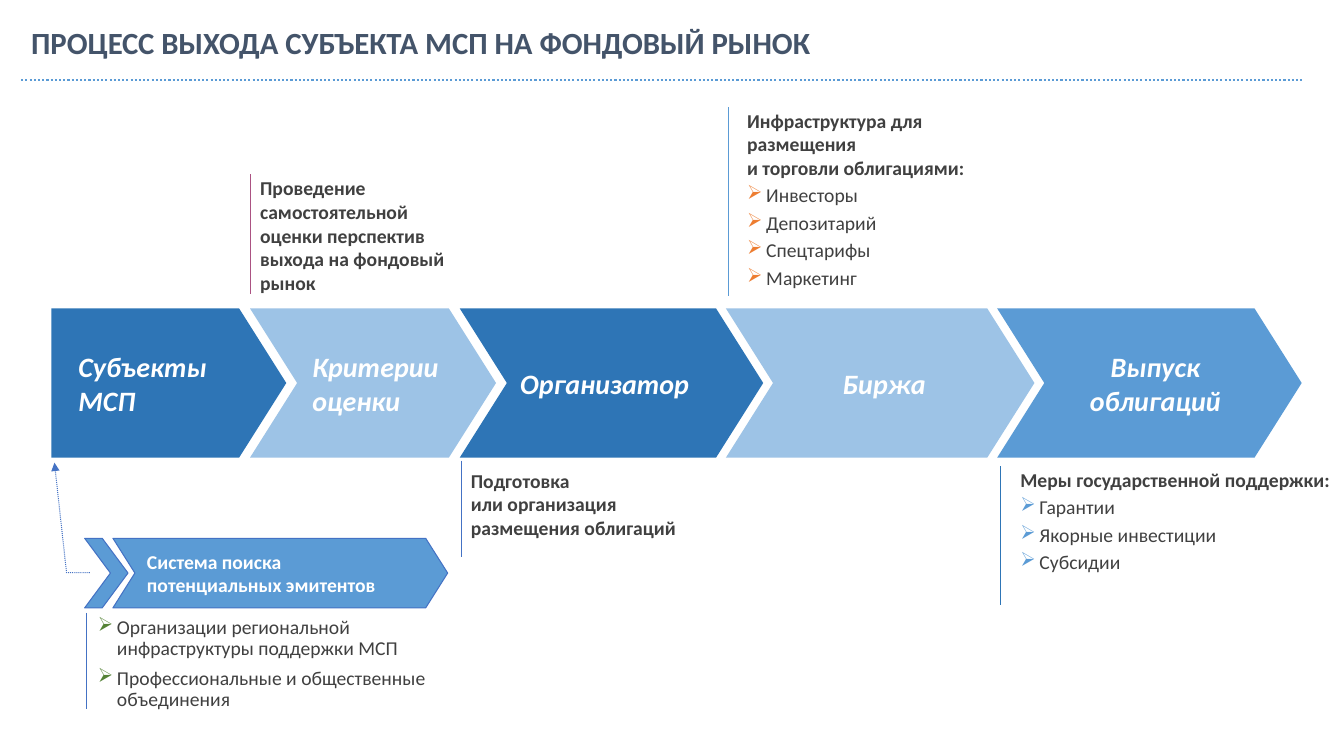
from lxml import etree
from pptx import Presentation
from pptx.dml.color import RGBColor
from pptx.enum import dml, shapes, text
from pptx.oxml import ns
from pptx.util import Inches, Pt

FONT = "Calibri"
WHITE = RGBColor(0xFF, 0xFF, 0xFF)
SLATE = RGBColor(0x44, 0x54, 0x6A)
GRAY = RGBColor(0x40, 0x40, 0x40)
DARK_BLUE = RGBColor(0x2E, 0x75, 0xB6)
BLUE = RGBColor(0x5B, 0x9B, 0xD5)
LIGHT_BLUE = RGBColor(0x9D, 0xC3, 0xE6)
ROYAL_BLUE = RGBColor(0x44, 0x72, 0xC4)
PURPLE = RGBColor(0xAB, 0x52, 0x82)
ORANGE = RGBColor(0xED, 0x7D, 0x31)
GREEN = RGBColor(0x54, 0x82, 0x35)

LEFT = text.PP_ALIGN.LEFT
CENTER = text.PP_ALIGN.CENTER
CHEVRON = shapes.MSO_SHAPE.CHEVRON
PENTAGON = shapes.MSO_SHAPE.PENTAGON

STEP_TOP, STEP_HEIGHT = 3.06, 1.48
STEPS = [
    (PENTAGON, 0.51, 2.33, DARK_BLUE, "Субъекты МСП", 0.68, 2.05, LEFT),
    (CHEVRON, 2.48, 2.44, LIGHT_BLUE, "Критерии оценки", 3, 1.6, LEFT),
    (CHEVRON, 4.56, 3.01, DARK_BLUE, "Организатор", 5.06, 2.2, LEFT),
    (CHEVRON, 7.2, 3.06, LIGHT_BLUE, "Биржа", 8.04, 1.44, CENTER),
    (CHEVRON, 9.89, 3.02, BLUE, "Выпуск облигаций", 10.57, 1.76, CENTER),
]


def style_para(para, size, color, bold=False, italic=False):
    for span in para.runs:
        span.font.name = FONT
        span.font.size = Pt(size)
        span.font.color.rgb = color
        span.font.bold = bold
        span.font.italic = italic


def add_bullet(para, color):
    props = para._p.get_or_add_pPr()
    props.set("marL", str(Inches(0.19)))
    props.set("indent", str(-Inches(0.19)))
    bullet_color = etree.SubElement(props, ns.qn("a:buClr"))
    etree.SubElement(bullet_color, ns.qn("a:srgbClr")).set("val", str(color))
    etree.SubElement(props, ns.qn("a:buChar")).set("char", "➢")


def set_frame(frame, insets, anchor=text.MSO_ANCHOR.TOP):
    frame.word_wrap = True
    frame.vertical_anchor = anchor
    (frame.margin_left, frame.margin_top,
     frame.margin_right, frame.margin_bottom) = map(Inches, insets)


def add_text_box(slide, left, top, width, height, insets, anchor=text.MSO_ANCHOR.TOP):
    box = slide.shapes.add_textbox(*map(Inches, (left, top, width, height)))
    set_frame(box.text_frame, insets, anchor)
    return box.text_frame


def add_block(slide, preset, left, top, width, height, adjust, fill, outline=None):
    block = slide.shapes.add_shape(preset, *map(Inches, (left, top, width, height)))
    block.shadow.inherit = False
    block.adjustments[0] = adjust
    block.fill.solid()
    block.fill.fore_color.rgb = fill
    if outline is None:
        block.line.fill.background()
    else:
        block.line.color.rgb = outline
        block.line.width = Pt(0.75)
    return block


def dot_line(line, color, width):
    line.color.rgb = color
    line.width = Pt(width)
    line.dash_style = dml.MSO_LINE.ROUND_DOT


def add_rule(slide, start_x, start_y, end_x, end_y, color, width=0.25):
    rule = slide.shapes.add_connector(
        shapes.MSO_CONNECTOR.STRAIGHT, *map(Inches, (start_x, start_y, end_x, end_y)))
    dot_line(rule.line, color, width)
    etree.SubElement(rule._element.spPr, ns.qn("a:effectLst"))


def add_header(slide, left, top, width, height):
    add_rule(slide, left, top + 0.56, left + width, top + 0.56, BLUE, 1.5)
    frame = add_text_box(slide, left, top, width, height, (0.1, 0.05, 0.1, 0.05))
    para = frame.paragraphs[0]
    para.text = "ПРОЦЕСС ВЫХОДА СУБЪЕКТА МСП НА ФОНДОВЫЙ РЫНОК"
    para.line_spacing = 0.9
    style_para(para, 22, SLATE, bold=True)


def add_steps(slide, top, height):
    for preset, left, width, fill, label, label_left, label_width, align in STEPS:
        add_block(slide, preset, left, top, width, height, 0.316, fill)
        frame = add_text_box(slide, label_left, top, label_width, height,
                             (0.1, 0.1, 0.08, 0.1), text.MSO_ANCHOR.MIDDLE)
        para = frame.paragraphs[0]
        para.text = label
        para.alignment = align
        style_para(para, 20, WHITE, bold=True, italic=True)


def add_note(slide, left, top, width, height, heading, items=(), bullet_color=None):
    frame = add_text_box(slide, left, top, width, height, (0, 0, 0, 0))
    frame.paragraphs[0].text = heading
    style_para(frame.paragraphs[0], 14, GRAY, bold=True)
    for item in items:
        para = frame.add_paragraph()
        para.text = item
        para.space_before = Pt(2.8)
        add_bullet(para, bullet_color)
        style_para(para, 14, GRAY)


def add_notes(slide):
    add_rule(slide, 2.48, 2.91, 2.48, 1.72, PURPLE)
    add_note(slide, 2.58, 1.75, 2.02, 1.2,
             "Проведение самостоятельной оценки перспектив выхода на фондовый рынок")
    add_rule(slide, 4.57, 5.52, 4.57, 4.57, ROYAL_BLUE)
    add_note(slide, 4.67, 4.65, 2.49, 0.83,
             "Подготовка \vили организация размещения облигаций")
    add_rule(slide, 7.22, 2.93, 7.22, 1.06, BLUE)
    add_note(slide, 7.41, 1.08, 2.46, 1.85,
             "Инфраструктура для размещения \vи торговли облигациями:",
             ["Инвесторы", "Депозитарий", "Спецтарифы", "Маркетинг"], ORANGE)
    add_rule(slide, 9.92, 6, 9.92, 4.62, DARK_BLUE)
    add_note(slide, 10.12, 4.64, 3.1, 1.67, "Меры государственной поддержки:",
             ["Гарантии", "Якорные инвестиции", "Субсидии"], BLUE)


def add_search_system(slide, left, top, width, height):
    builder = slide.shapes.build_freeform(Inches(left + 0.05), Inches(top + 0.34), scale=1)
    builder.add_line_segments(
        [(Inches(left - 0.18), Inches(top + 0.34)), (Inches(left - 0.3), Inches(top - 0.75))],
        close=False)
    arrow = builder.convert_to_shape()
    arrow.shadow.inherit = False
    arrow.fill.background()
    dot_line(arrow.line, ROYAL_BLUE, 0.75)
    etree.SubElement(arrow.line._get_or_add_ln(), ns.qn("a:tailEnd")).set("type", "triangle")

    add_rule(slide, left + 0.01, top + 1.69, left + 0.01, top + 0.74, ROYAL_BLUE)
    frame = add_text_box(slide, left + 0.05, top + 0.79, 3.35, 0.83, (0.08, 0, 0, 0))
    frame.text = ("Организации региональной инфраструктуры поддержки МСП\n"
                  "Профессиональные и общественные объединения")
    for para in frame.paragraphs:
        para.line_spacing = Pt(15)
        para.space_after = Pt(6)
        add_bullet(para, GREEN)
        style_para(para, 14, GRAY)

    banner = add_block(slide, CHEVRON, left + 0.28, top, width - 0.28, height,
                       0.316, BLUE, ROYAL_BLUE)
    set_frame(banner.text_frame, (0.12, 0.08, 0.12, 0.08), text.MSO_ANCHOR.MIDDLE)
    para = banner.text_frame.paragraphs[0]
    para.text = "Система поиска потенциальных эмитентов"
    para.alignment = LEFT
    style_para(para, 14, WHITE, bold=True)
    add_block(slide, CHEVRON, left, top, 0.43, height, 0.595, BLUE, ROYAL_BLUE)


def main():
    deck = Presentation()
    deck.slide_width = Inches(13.33)
    deck.slide_height = Inches(7.5)
    slide = deck.slides.add_slide(deck.slide_layouts[6])
    add_header(slide, 0.21, 0.23, 12.72, 0.51)
    add_steps(slide, STEP_TOP, STEP_HEIGHT)
    add_notes(slide)
    add_search_system(slide, 0.84, 5.34, 3.6, 0.69)
    deck.save("out.pptx")


if __name__ == "__main__":
    main()
